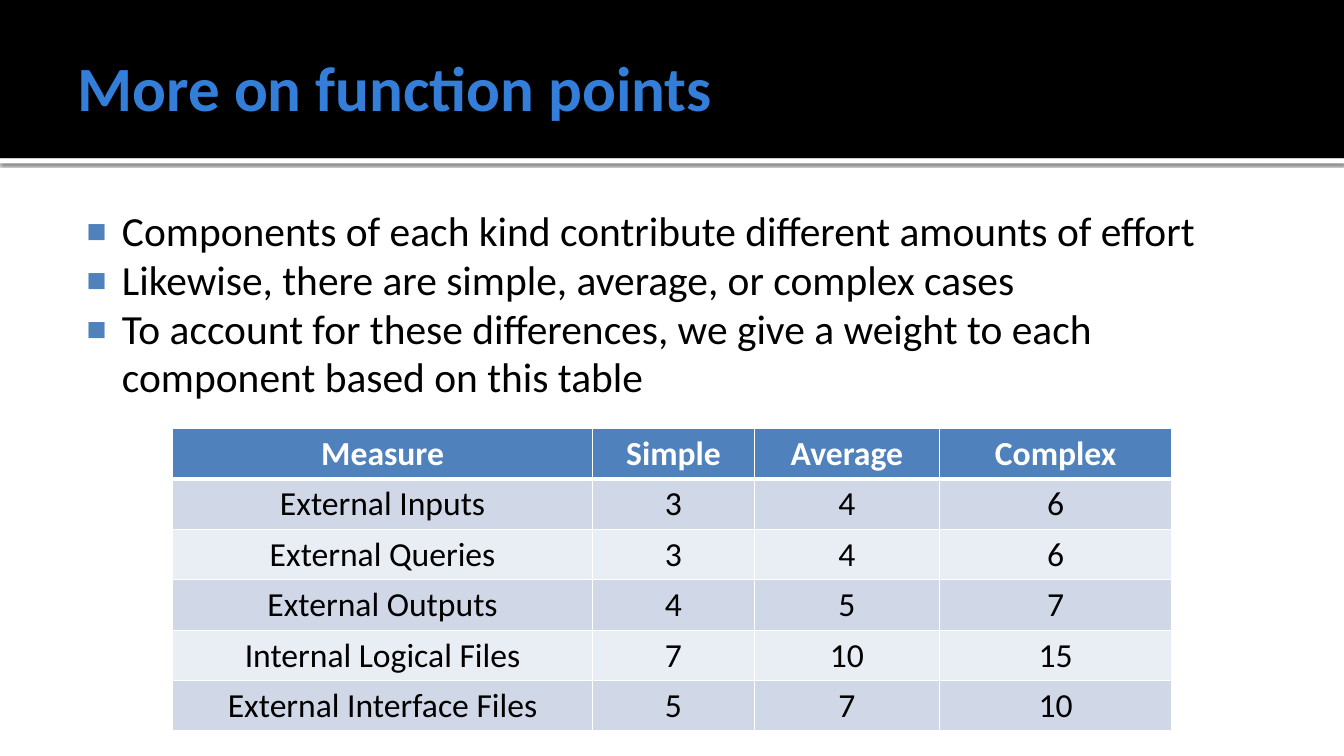
from lxml import etree
from pptx import Presentation
from pptx import util as u
from pptx.dml.color import RGBColor
from pptx.enum import shapes, text
from pptx.oxml import ns

# Content
TITLE = "More on function points"
POINTS = [
    "Components of each kind contribute different amounts of effort",
    "Likewise, there are simple, average, or complex cases",
    "To account for these differences, we give a weight to each component based on this table",
]
WEIGHTS = [
    ("Measure", "Simple", "Average", "Complex"),
    ("External Inputs", 3, 4, 6),
    ("External Queries", 3, 4, 6),
    ("External Outputs", 4, 5, 7),
    ("Internal Logical Files", 7, 10, 15),
    ("External Interface Files", 5, 7, 10),
]
COLUMN_WIDTHS = [4.17, 1.6, 1.84, 2.3]
ROW_HEIGHT = 0.5
FONT = "Calibri"
COLORS = {"black": "000000", "white": "FFFFFF", "title": "337ED9",
          "accent": "4F81BD", "odd": "D0D8E8", "even": "E9EDF4"}


def rgb(name):
    return RGBColor.from_string(COLORS[name])


def add_xml(parent, tag, **attributes):
    return etree.SubElement(parent, ns.qn(tag), attributes)


def set_font(para, size, color, bold=False):
    font = para.font
    font.name, font.size, font.bold = FONT, u.Pt(size), bold
    font.color.rgb = rgb(color)


def add_band(top, height, color):
    band = page.shapes.add_shape(shapes.MSO_SHAPE.RECTANGLE, 0, u.Inches(top),
                                 deck.slide_width, u.Inches(height))
    band.shadow.inherit = False
    band.fill.solid()
    band.fill.fore_color.rgb = rgb(color)
    band.line.fill.background()
    return band


def add_text_box(top, height, margins, anchor):
    box = page.shapes.add_textbox(*map(u.Inches, (0.67, top, 12, height)))
    frame = box.text_frame
    frame.word_wrap = True
    frame.vertical_anchor = anchor
    (frame.margin_left, frame.margin_top,
     frame.margin_right, frame.margin_bottom) = map(u.Inches, margins)
    return frame


def add_bullet(para):
    props = para._p.get_or_add_pPr()
    props.set("marL", str(u.Inches(0.48)))
    props.set("indent", str(u.Inches(-0.35)))
    add_xml(add_xml(props, "a:buClr"), "a:srgbClr", val=COLORS["accent"])
    add_xml(props, "a:buSzPct", val="80000")
    add_xml(props, "a:buFont", typeface="Arial")
    add_xml(props, "a:buChar", char="■")


def add_borders(cell, top, bottom):
    props = cell._tc.get_or_add_tcPr()
    for side, width in (("L", 1), ("R", 1), ("T", top), ("B", bottom)):
        line = add_xml(props, f"a:ln{side}", w=str(u.Pt(width)))
        add_xml(add_xml(line, "a:solidFill"), "a:srgbClr", val=COLORS["white"])


deck = Presentation()
deck.slide_width, deck.slide_height = u.Inches(13.33), u.Inches(7.5)
page = deck.slides.add_slide(deck.slide_layouts[6])

# Header bands; the thin white one casts a shadow
strip = add_band(1.57, 0.05, "white")
effects = strip._element.spPr.find(ns.qn("a:effectLst"))
shadow = add_xml(effects, "a:outerShdw", blurRad=str(u.Pt(2.5)), dist=str(u.Pt(0.8)),
                 dir="5400000", algn="t", rotWithShape="0")
shade = add_xml(shadow, "a:srgbClr", val=COLORS["black"])
add_xml(shade, "a:alpha", val="60000")
add_band(0, 1.57, "black")

# Title
heading = add_text_box(0.17, 1.37, (0.1, 0.05, 0.05, 0.05), text.MSO_ANCHOR.MIDDLE).paragraphs[0]
heading.text = TITLE
set_font(heading, 45, "title", bold=True)

# Bullet points
body = add_text_box(1.94, 2.31, (0.06, 0.12, 0.1, 0.05), text.MSO_ANCHOR.TOP)
for index, point in enumerate(POINTS):
    para = body.add_paragraph() if index else body.paragraphs[0]
    para.text = point
    para.line_spacing = 0.98
    add_bullet(para)
    set_font(para, 29.6, "black")

# Weight table
table = page.shapes.add_table(
    len(WEIGHTS), len(COLUMN_WIDTHS), u.Inches(1.71), u.Inches(4.25),
    u.Inches(sum(COLUMN_WIDTHS)), u.Inches(ROW_HEIGHT * len(WEIGHTS))).table
for column, width in zip(table.columns, COLUMN_WIDTHS):
    column.width = u.Inches(width)
for r, values in enumerate(WEIGHTS):
    header = r == 0
    fill = "accent" if header else "odd" if r % 2 else "even"
    for c, value in enumerate(values):
        cell = table.cell(r, c)
        add_borders(cell, top=3 if r == 1 else 1, bottom=3 if header else 1)
        cell.fill.solid()
        cell.fill.fore_color.rgb = rgb(fill)
        cell.vertical_anchor = text.MSO_ANCHOR.MIDDLE
        cell.text = str(value)
        para = cell.text_frame.paragraphs[0]
        para.alignment = text.PP_ALIGN.CENTER
        set_font(para, 24, "white" if header else "black", bold=header)

deck.save("out.pptx")
